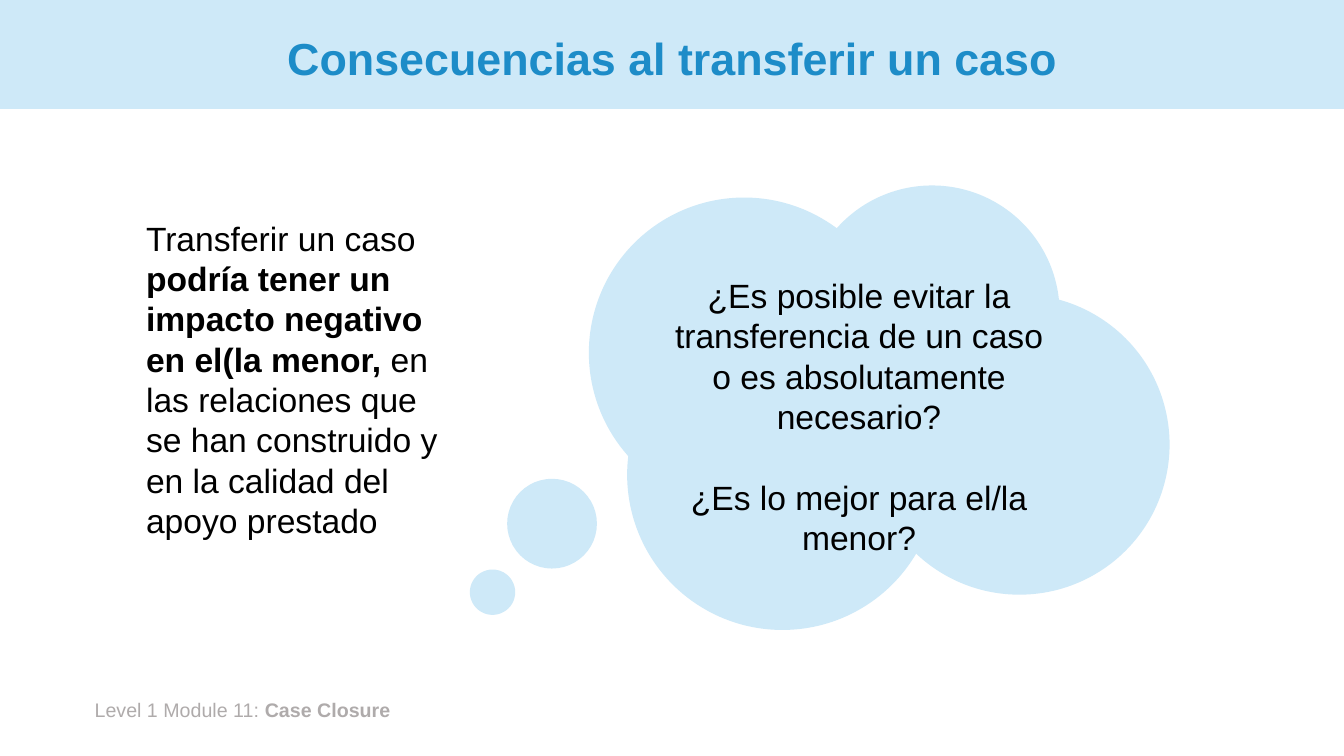
from typing import NamedTuple

from pptx import Presentation
from pptx import util as u
from pptx.dml.color import RGBColor
from pptx.enum import shapes, text

PX = 9144  # EMU per px, 100 px to the inch
FONT = "Arial"
COLORS = {"sky": "CEE9F8", "title": "1D8CC8", "body": "000000", "footer": "AFABAB"}


class Box(NamedTuple):
    left: int
    top: int
    width: int
    height: int

    def emu(self) -> list[int]:
        return [length * PX for length in self]


class Run(NamedTuple):
    words: str
    bold: bool = False


class TextBlock(NamedTuple):
    box: Box
    paragraphs: list[list[Run]]
    size: int
    color: str
    align: text.PP_ALIGN = text.PP_ALIGN.LEFT
    gap: float = 0  # points between paragraphs


class Circle(NamedTuple):
    left: int
    top: int
    diameter: int


BAND = Box(0, 0, 1333, 108)
TITLE = TextBlock(Box(92, 13, 1150, 95), [[Run("Consecuencias al transferir un caso", True)]],
                  32, "title", text.PP_ALIGN.CENTER)
CLOUD = [
    Circle(584, 196, 308),
    Circle(798, 184, 253),
    Circle(622, 317, 308),
    Circle(862, 292, 298),
    Circle(503, 475, 89),
    Circle(466, 565, 45),
]
TEXT_BLOCKS = [
    TextBlock(Box(84, 687, 455, 34),
              [[Run("Level 1 Module 11: "), Run("Case Closure", True)]], 14, "footer"),
    TextBlock(Box(135, 211, 331, 333),
              [[Run("Transferir un caso "),
                Run("podría tener un impacto negativo en el(la menor, ", True),
                Run("en las relaciones que se han construido y en la calidad del apoyo prestado")]],
              24, "body"),
    TextBlock(Box(657, 268, 390, 293),
              [[Run("¿Es posible evitar la transferencia de un caso o es absolutamente necesario?")],
               [Run("¿Es lo mejor para el/la menor?")]],
              24, "body", text.PP_ALIGN.CENTER, gap=28.8),
]


def rgb(name: str) -> RGBColor:
    return RGBColor.from_string(COLORS[name])


def fill_text(shape, block: TextBlock) -> None:
    frame = shape.text_frame
    frame.word_wrap = True
    for index, runs in enumerate(block.paragraphs):
        paragraph = frame.add_paragraph() if index else frame.paragraphs[0]
        paragraph.alignment = block.align
        if index:
            paragraph.space_before = u.Pt(block.gap)
        for part in runs:
            run = paragraph.add_run()
            run.text = part.words
            run.font.name = FONT
            run.font.size = u.Pt(block.size)
            run.font.bold = part.bold
            run.font.color.rgb = rgb(block.color)


def add_sky_shape(parent, kind: shapes.MSO_SHAPE, box: Box):
    shape = parent.add_shape(kind, *box.emu())
    shape.shadow.inherit = False
    shape.fill.solid()
    shape.fill.fore_color.rgb = rgb("sky")
    shape.line.fill.background()
    return shape


def main() -> None:
    presentation = Presentation()
    presentation.slide_width = BAND.width * PX
    presentation.slide_height = 750 * PX
    slide = presentation.slides.add_slide(presentation.slide_layouts[5])

    # Title over its band
    title = slide.shapes.title
    title.left, title.top, title.width, title.height = TITLE.box.emu()
    fill_text(title, TITLE)
    title.text_frame.vertical_anchor = text.MSO_ANCHOR.MIDDLE
    title.text_frame.paragraphs[0].line_spacing = 0.9
    band = add_sky_shape(slide.shapes, shapes.MSO_SHAPE.RECTANGLE, BAND)
    title.element.addprevious(band.element)

    # Thought cloud
    cloud = slide.shapes.add_group_shape()
    for circle in CLOUD:
        box = Box(circle.left, circle.top, circle.diameter, circle.diameter)
        add_sky_shape(cloud.shapes, shapes.MSO_SHAPE.OVAL, box)

    # Footer, statement and questions
    for block in TEXT_BLOCKS:
        fill_text(slide.shapes.add_textbox(*block.box.emu()), block)

    presentation.save("out.pptx")


if __name__ == "__main__":
    main()
